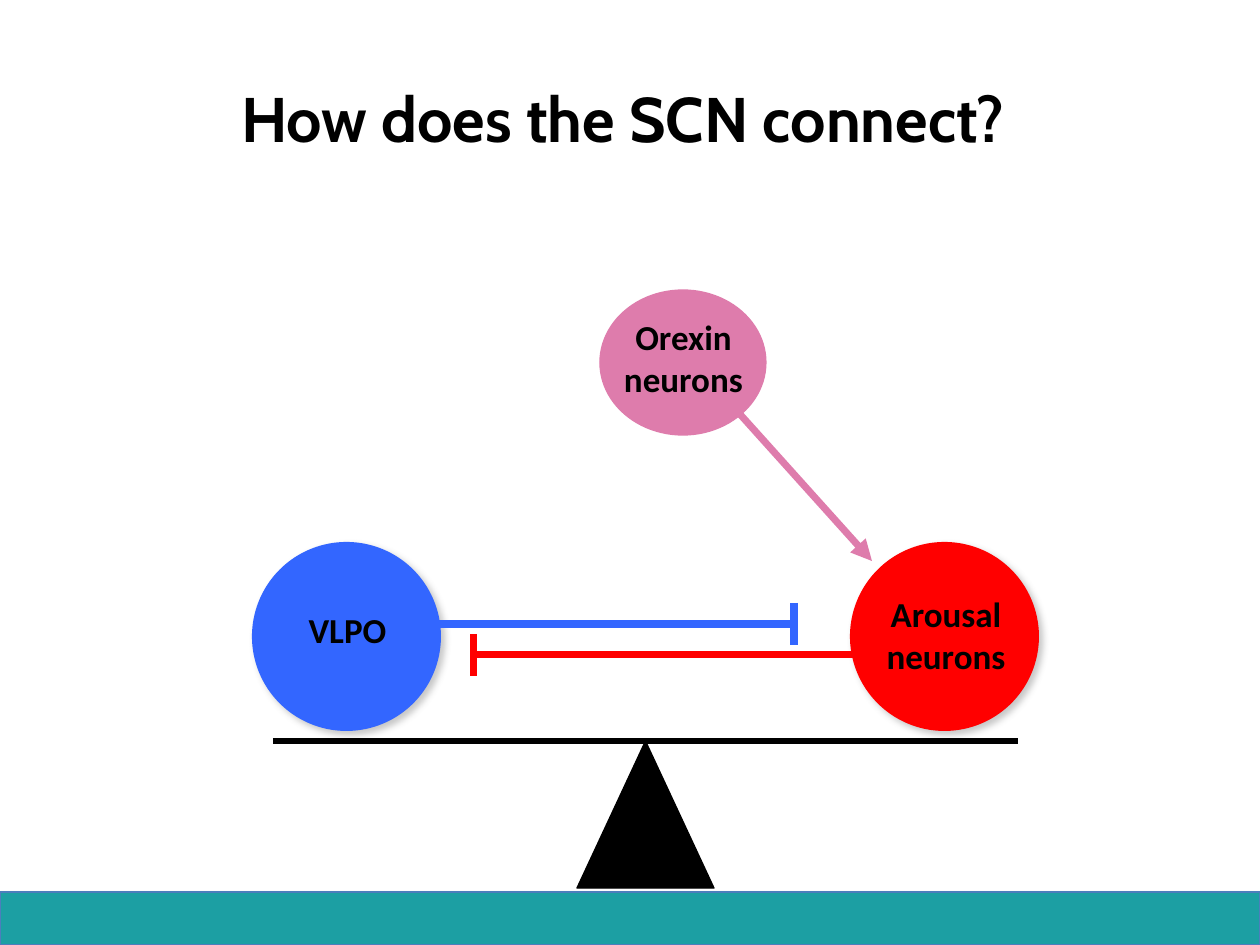
import pptx
import pptx.dml.color
import pptx.enum.shapes
import pptx.enum.text
import pptx.oxml
import pptx.oxml.ns
import pptx.util

EMU_PER_PX = 914400 / 126
COLORS = {
    "teal": "1C9FA3",
    "teal_edge": "4B7EBC",
    "orexin": "DE7CAC",
    "vlpo": "3366FF",
    "arousal": "FF0000",
    "black": "000000",
    "gray": "808080",
}
SHAPE = pptx.enum.shapes.MSO_SHAPE
ANCHOR = pptx.enum.text.MSO_ANCHOR


def emu(px):
    return pptx.util.Emu(round(px * EMU_PER_PX))


def rgb(color):
    return pptx.dml.color.RGBColor.from_string(COLORS[color])


def drawingml(markup):
    """Parse one element, given as 'tag attributes>...', in the a: namespace."""
    return pptx.oxml.parse_xml(markup.replace(">", f" {pptx.oxml.ns.nsdecls('a')}>", 1))


class Diagram:
    def __init__(self, slide):
        self.slide = slide

    def shape(self, kind, left, top, width, height, fill, edge=None, shadow=None):
        """shadow is (color, opacity %, blur pt, distance pt, angle)."""
        shape = self.slide.shapes.add_shape(
            kind, emu(left), emu(top), emu(width), emu(height))
        shape.shadow.inherit = False
        shape.fill.solid()
        shape.fill.fore_color.rgb = rgb(fill)
        if edge:
            shape.line.color.rgb = rgb(edge)
            shape.line.width = pptx.util.Pt(0.75)
        else:
            shape.line.fill.background()
        if shadow:
            self.cast_shadow(shape, *shadow)

    def cast_shadow(self, shape, color, opacity, blur, distance, angle):
        effects = shape._element.spPr.find(pptx.oxml.ns.qn("a:effectLst"))
        effects.append(drawingml(
            f'<a:outerShdw blurRad="{pptx.util.Pt(blur)}" dist="{pptx.util.Pt(distance)}"'
            f' dir="{angle * 60000}" rotWithShape="0">'
            f'<a:srgbClr val="{COLORS[color]}"><a:alpha val="{opacity * 1000}"/>'
            '</a:srgbClr></a:outerShdw>'))

    def line(self, start, end, color, width, arrow=False, parent=None):
        line = (parent or self.slide).shapes.add_connector(
            pptx.enum.shapes.MSO_CONNECTOR.STRAIGHT, *map(emu, start + end))
        line.line.color.rgb = rgb(color)
        line.line.width = pptx.util.Pt(width)
        if arrow:
            line.line._get_or_add_ln().append(drawingml('<a:tailEnd type="triangle"></a:tailEnd>'))
        line._element.spPr.append(drawingml("<a:effectLst></a:effectLst>"))

    def inhibition(self, source_x, target_x, y, color, width):
        """Draw a line that ends in a crossbar at target_x."""
        pathway = self.slide.shapes.add_group_shape()
        half_bar = 21
        self.line((source_x, y), (target_x, y), color, width, parent=pathway)
        self.line((target_x, y - half_bar), (target_x, y + half_bar),
                  color, width, parent=pathway)

    def text(self, lines, left, top, width, height, size=20, font="Calibri",
             wrap=False, anchor=ANCHOR.TOP):
        box = self.slide.shapes.add_textbox(
            emu(left), emu(top), emu(width), emu(height))
        frame = box.text_frame
        frame.word_wrap = wrap
        frame.vertical_anchor = anchor
        frame.text = "\n".join(lines)
        for paragraph in frame.paragraphs:
            paragraph.alignment = pptx.enum.text.PP_ALIGN.CENTER
            paragraph.font.name = font
            paragraph.font.size = pptx.util.Pt(size)
            paragraph.font.bold = True
            paragraph.font.color.rgb = rgb("black")


def main():
    presentation = pptx.Presentation()
    presentation.slide_width = emu(1260)
    presentation.slide_height = emu(945)
    diagram = Diagram(presentation.slides.add_slide(presentation.slide_layouts[6]))

    diagram.shape(SHAPE.RECTANGLE, 0, 892, 1260, 53, "teal", "teal_edge",
                  shadow=("black", 35, 3.1, 1.8, 90))

    diagram.shape(SHAPE.OVAL, 600, 290, 166, 145, "orexin", "orexin")
    diagram.line((693, 362), (872, 561), "orexin", 4, arrow=True)

    for left, center in ((252, "vlpo"), (850, "arousal")):
        diagram.shape(SHAPE.OVAL, left, 542, 189, 189, center,
                      shadow=("gray", 43, 4, 3, 45))

    diagram.line((273, 741), (1018, 741), "black", 3)
    diagram.shape(SHAPE.ISOSCELES_TRIANGLE, 577, 741, 137, 147, "black", "black")

    diagram.inhibition(437, 794, 624, "vlpo", 4.5)
    diagram.inhibition(882, 474, 655, "arousal", 4)

    diagram.text(["VLPO"], 295, 602, 105, 55)
    diagram.text(["Arousal", "neurons"], 873, 586, 146, 97)
    diagram.text(["How does the SCN connect? "], 63, 38, 1134, 158,
                 size=36, font="Cabin", wrap=True, anchor=ANCHOR.MIDDLE)
    diagram.text(["Orexin neurons"], 610, 309, 147, 97, wrap=True)

    presentation.save("out.pptx")


if __name__ == "__main__":
    main()
